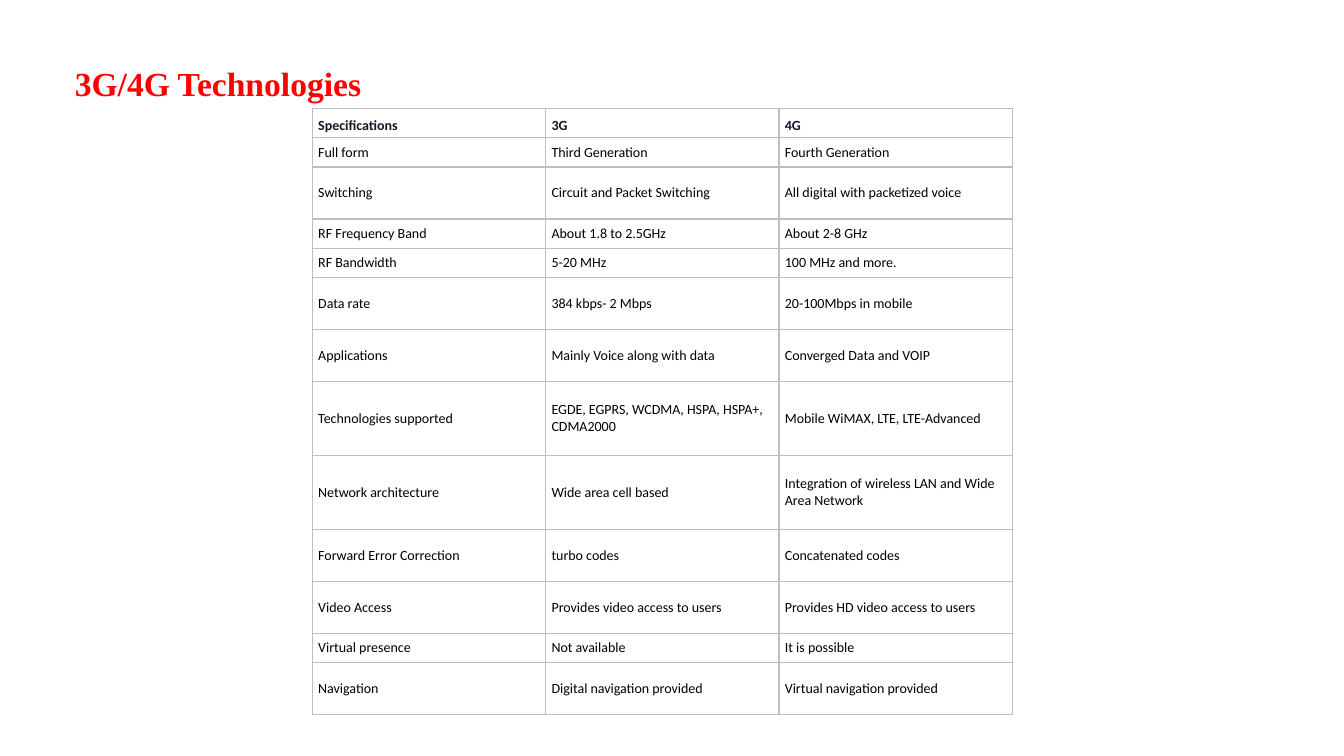
"""Build a slide that compares 3G and 4G technologies in a table."""
from dataclasses import dataclass

from lxml import etree
from pptx import Presentation
from pptx import util as u
from pptx.dml.color import RGBColor
from pptx.enum import text
from pptx.oxml import ns


@dataclass(frozen=True)
class Theme:
    title_font: str = "Times New Roman"
    body_font: str = "Calibri"
    title_size: float = 24
    body_size: float = 10
    border_width: float = 1
    title: str = "FF0000"
    header: str = "111827"
    body: str = "000000"
    border: str = "BCBEBF"
    cell: str = "FFFFFF"


SHORT, MEDIUM, TALL = 0.74, 1.31, 1.86
ROWS = [
    (SHORT, "Specifications", "3G", "4G"),
    (SHORT, "Full form", "Third Generation", "Fourth Generation"),
    (MEDIUM, "Switching", "Circuit and Packet Switching", "All digital with packetized voice"),
    (SHORT, "RF Frequency Band", "About 1.8 to 2.5GHz", "About 2-8 GHz"),
    (SHORT, "RF Bandwidth", "5-20 MHz", "100 MHz and more."),
    (MEDIUM, "Data rate", "384 kbps- 2 Mbps", "20-100Mbps in mobile"),
    (MEDIUM, "Applications", "Mainly Voice along with data", "Converged Data and VOIP"),
    (TALL, "Technologies supported", "EGDE, EGPRS, WCDMA, HSPA, HSPA+, CDMA2000",
     "Mobile WiMAX, LTE, LTE-Advanced"),
    (TALL, "Network architecture", "Wide area cell based",
     "Integration of wireless LAN and Wide Area Network"),
    (MEDIUM, "Forward Error Correction", "turbo codes", "Concatenated codes"),
    (MEDIUM, "Video Access", "Provides video access to users", "Provides HD video access to users"),
    (SHORT, "Virtual presence", "Not available", "It is possible"),
    (MEDIUM, "Navigation", "Digital navigation provided", "Virtual navigation provided"),
]


def write(tf, content, *, font, size, color, bold=False, anchor=text.MSO_ANCHOR.MIDDLE):
    tf.vertical_anchor = anchor
    p = tf.paragraphs[0]
    p.alignment = text.PP_ALIGN.LEFT
    r = p.add_run()
    r.text = content
    r.font.name, r.font.size, r.font.bold = font, u.Pt(size), bold
    r.font.color.rgb = RGBColor.from_string(color)


class Deck:
    def __init__(self, theme):
        self.theme = theme
        self.prs = Presentation()
        self.prs.slide_width, self.prs.slide_height = u.Cm(33.87), u.Cm(19.05)
        self.s = self.prs.slides.add_slide(self.prs.slide_layouts[5])

    def title(self, content, left, top, width, height):
        sp = self.s.shapes.title
        sp.left, sp.top, sp.width, sp.height = map(u.Cm, (left, top, width, height))
        tf = sp.text_frame
        tf.word_wrap = False
        tf.auto_size = text.MSO_AUTO_SIZE.SHAPE_TO_FIT_TEXT
        write(tf, content, font=self.theme.title_font, size=self.theme.title_size,
              color=self.theme.title, bold=True, anchor=text.MSO_ANCHOR.TOP)

    def borders(self, cell):
        tc_pr = cell._tc.get_or_add_tcPr()
        for side in ("lnL", "lnR", "lnT", "lnB"):
            ln = etree.SubElement(tc_pr, ns.qn(f"a:{side}"), w=str(u.Pt(self.theme.border_width)))
            fill = etree.SubElement(ln, ns.qn("a:solidFill"))
            etree.SubElement(fill, ns.qn("a:srgbClr"), val=self.theme.border)

    def cell(self, cell, content, header):
        self.borders(cell)
        cell.fill.solid()
        cell.fill.fore_color.rgb = RGBColor.from_string(self.theme.cell)
        cell.margin_left = cell.margin_right = u.Cm(0.15)
        cell.margin_top = cell.margin_bottom = u.Cm(0.08)
        anchor = text.MSO_ANCHOR.BOTTOM if header else text.MSO_ANCHOR.MIDDLE
        cell.vertical_anchor = anchor
        write(cell.text_frame, content, font=self.theme.body_font, size=self.theme.body_size,
              color=self.theme.header if header else self.theme.body, bold=header, anchor=anchor)

    def table(self, rows, left, top, width):
        height = sum(row[0] for row in rows)
        frame = self.s.shapes.add_table(len(rows), len(rows[0]) - 1,
                                        *map(u.Cm, (left, top, width, height)))
        tbl = frame.table
        tbl.first_row = tbl.horz_banding = False
        for i, (row_height, *values) in enumerate(rows):
            tbl.rows[i].height = u.Cm(row_height)
            for j, value in enumerate(values):
                self.cell(tbl.cell(i, j), value, header=i == 0)


def main():
    deck = Deck(Theme())
    deck.title("3G/4G Technologies", 1.63, 1.45, 7.8, 1.28)
    deck.table(ROWS, 7.87, 2.73, 17.64)
    deck.prs.save("out.pptx")


if __name__ == "__main__":
    main()
